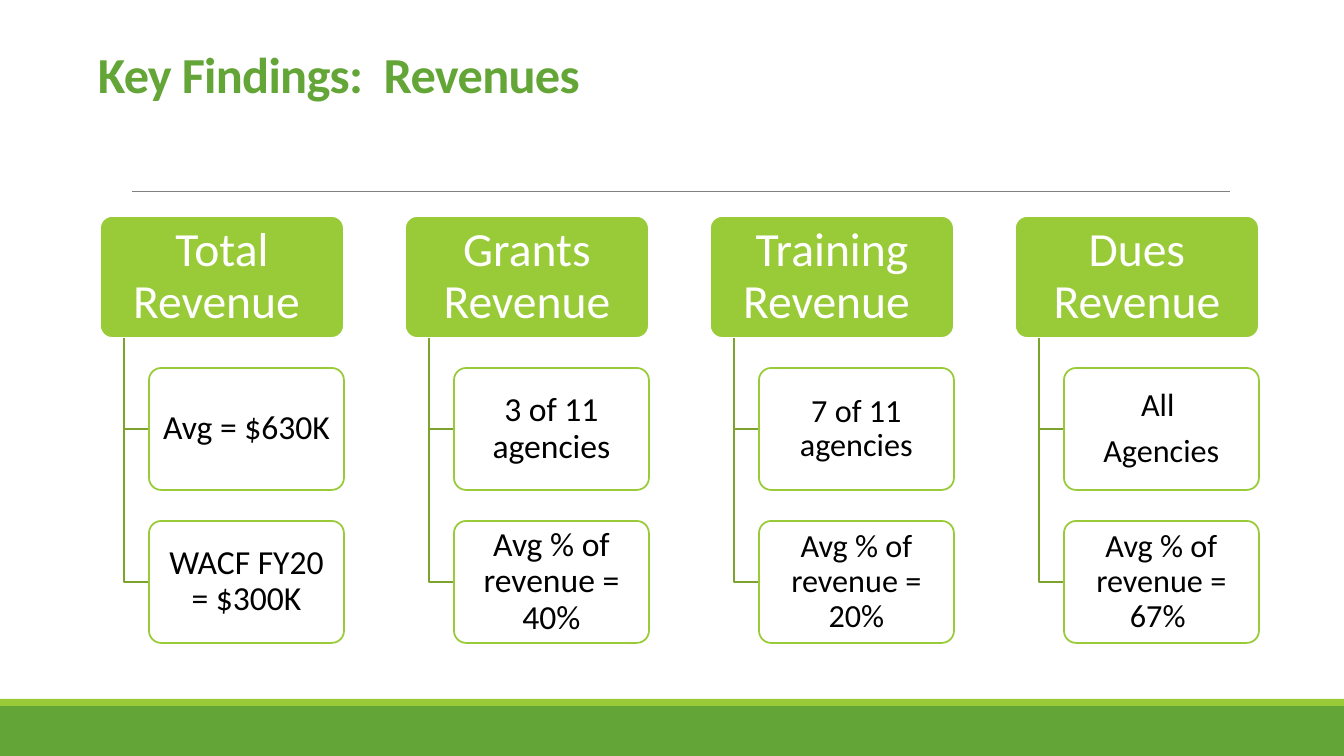
from lxml import etree
from pptx import Presentation
from pptx.dml.color import RGBColor
from pptx.enum.shapes import MSO_CONNECTOR, MSO_SHAPE
from pptx.enum.text import MSO_ANCHOR, PP_ALIGN
from pptx.oxml.ns import qn
from pptx.util import Pt

PX = 914400 / 100.8  # EMU in one px
RECTANGLE, ROUNDED = MSO_SHAPE.RECTANGLE, MSO_SHAPE.ROUNDED_RECTANGLE
MIDDLE, BOTTOM = MSO_ANCHOR.MIDDLE, MSO_ANCHOR.BOTTOM
CENTER = PP_ALIGN.CENTER
COLORS = {name: RGBColor.from_string(value) for name, value in {
    "green": "63A537", "lime": "99CB38", "elbow": "7BA32D",
    "rule": "808080", "white": "FFFFFF", "black": "000000"}.items()}


def emu(*lengths):
    return [round(length * PX) for length in lengths]


def add_card(left, top, width, text, size, colors, insets):
    fill, line, ink = colors
    card = slide.shapes.add_shape(ROUNDED, *emu(left, top, width, CARD_HEIGHT))
    card.shadow.inherit = False
    card.adjustments[0] = 0.1
    card.fill.solid()
    card.fill.fore_color.rgb = COLORS[fill]
    card.line.color.rgb = COLORS[line]
    card.line.width = Pt(1.25)
    frame = card.text_frame
    frame.word_wrap = True
    frame.vertical_anchor = MIDDLE
    frame.margin_left = frame.margin_right = emu(insets[0])[0]
    frame.margin_top = frame.margin_bottom = emu(insets[1])[0]
    frame.text = text
    for para in frame.paragraphs:
        para.alignment = CENTER
        para.line_spacing = 0.9
        para.space_after = Pt(8)
        font = para.runs[0].font
        font.name, font.size = "Calibri", Pt(size)
        font.color.rgb = COLORS[ink]
    return card


deck = Presentation()
deck.slide_width, deck.slide_height = emu(1344, 756)
slide = deck.slides.add_slide(deck.slide_layouts[6])

# Footer bands
for top, height, color in ((706, 50, "green"), (699, 7, "lime")):
    band = slide.shapes.add_shape(RECTANGLE, *emu(0, top, 1344, height))
    band.shadow.inherit = False
    band.fill.solid()
    band.fill.fore_color.rgb = COLORS[color]
    band.line.fill.background()

# Rule under the title
rule = slide.shapes.add_connector(MSO_CONNECTOR.STRAIGHT, *emu(132, 191, 1230, 191))
rule.line.color.rgb = COLORS["rule"]
rule.line.width = Pt(0.5)
etree.SubElement(rule._element.spPr, qn("a:effectLst"))

# Title
title = slide.shapes.add_textbox(*emu(88, 0, 1109, 109)).text_frame
title.word_wrap = True
title.vertical_anchor = BOTTOM
title.text = "Key Findings:  Revenues"
title.paragraphs[0].line_spacing = 0.85
span = title.paragraphs[0].runs[0]
span.font.name, span.font.size, span.font.bold = "Calibri", Pt(36), True
span.font.color.rgb = COLORS["green"]
span.font._element.set("spc", "-50")

# Revenue columns: a heading with two findings hanging from it
COLUMN_LEFT, COLUMN_STEP = 100, 305
HEADING_TOP, HEADING_WIDTH, CARD_HEIGHT = 216, 244, 122
FINDING_TOP, FINDING_STEP, FINDING_WIDTH = 368, 153, 195
STEM_INDENT, FINDING_INDENT = 24, 49
HEADING_COLORS = ("lime", "white", "white")
FINDING_COLORS = ("white", "lime", "black")
COLUMNS = (
    ("Total Revenue ", 24, ("Avg = $630K", "WACF FY20 = $300K")),
    ("Grants Revenue", 24, ("3 of 11 agencies", "Avg % of revenue = 40%")),
    ("Training Revenue ", 23, ("7 of 11 agencies", "Avg % of revenue = 20%")),
    ("Dues Revenue", 23, ("All \nAgencies", "Avg % of revenue = 67% ")),
)
for column, (heading, size, findings) in enumerate(COLUMNS):
    left = COLUMN_LEFT + column * COLUMN_STEP
    add_card(left, HEADING_TOP, HEADING_WIDTH, heading, 34, HEADING_COLORS, (7, 5))
    stem, finding_left = left + STEM_INDENT, left + FINDING_INDENT
    stem_top = HEADING_TOP + CARD_HEIGHT
    for row, finding in enumerate(findings):
        top = FINDING_TOP + row * FINDING_STEP
        middle = top + CARD_HEIGHT // 2
        # Elbow line from the heading to the finding
        builder = slide.shapes.build_freeform(stem, stem_top, scale=PX)
        builder.add_line_segments([(stem, middle), (finding_left, middle)], close=False)
        elbow = builder.convert_to_shape()
        elbow.shadow.inherit = False
        elbow.fill.background()
        elbow.line.color.rgb = COLORS["elbow"]
        elbow.line.width = Pt(1.25)
        # Finding, with a slightly see-through fill
        card = add_card(finding_left, top, FINDING_WIDTH, finding, size, FINDING_COLORS, (5, 3))
        fill_color = card._element.spPr.find(qn("a:solidFill"))[0]
        etree.SubElement(fill_color, qn("a:alpha"), val="90000")

deck.save("out.pptx")
